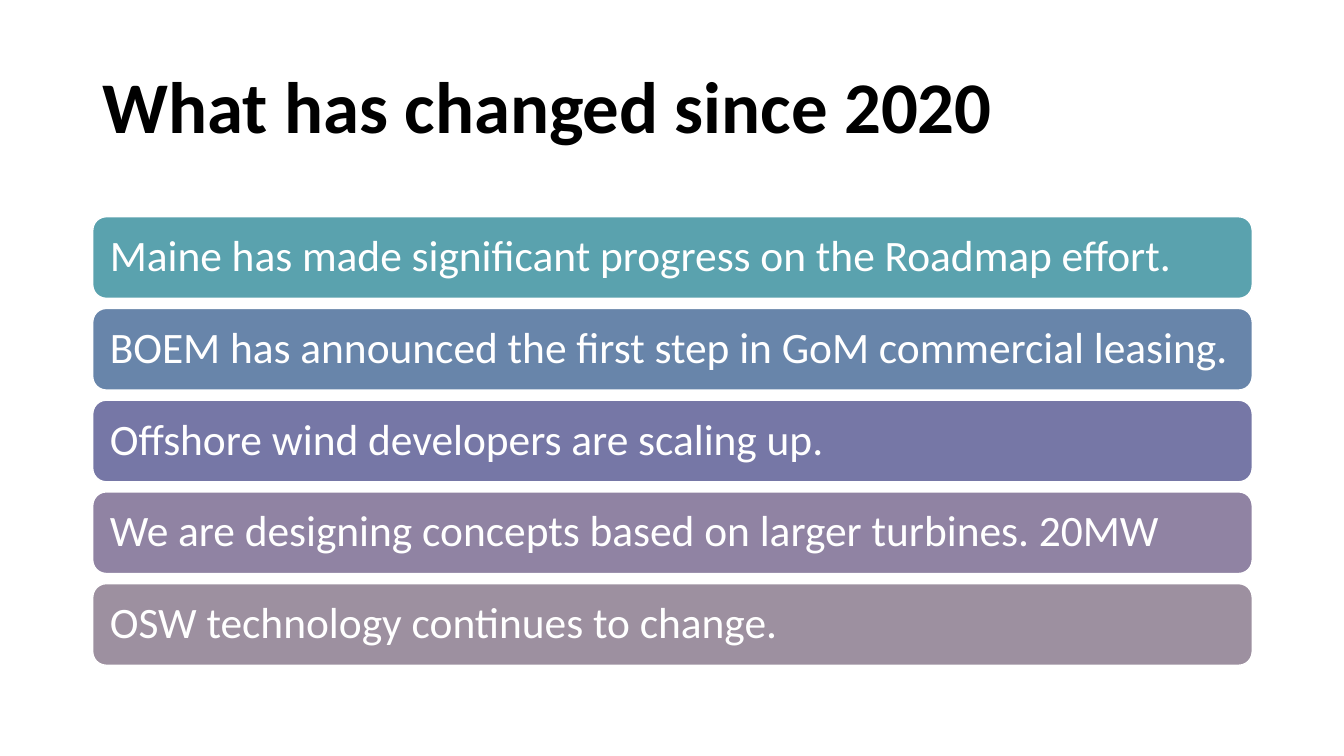
from typing import NamedTuple

from pptx import Presentation
from pptx.dml.color import RGBColor
from pptx.enum.shapes import MSO_SHAPE as SHAPE
from pptx.enum.text import MSO_ANCHOR as ANCHOR, PP_ALIGN as ALIGN
from pptx.shapes.autoshape import Shape
from pptx.slide import Slide
from pptx.util import Emu, Pt

PX = 9144  # 100 px to the inch
LEFT, WIDTH = 92, 1150
TITLE_TOP, TITLE_HEIGHT = 34, 151
BARS_TOP, BAR_HEIGHT, BAR_PITCH = 215, 81, 91
BAR_INSET = 13


class Bar(NamedTuple):
    text: str
    fill: str


TITLE = "What has changed since 2020"
BARS = [
    Bar("Maine has made significant progress on the Roadmap effort.", "5AA2AE"),
    Bar("BOEM has announced the first step in GoM commercial leasing.", "6885AA"),
    Bar("Offshore wind developers are scaling up.", "7677A6"),
    Bar("We are designing concepts based on larger turbines. 20MW", "9083A3"),
    Bar("OSW technology continues to change.", "9D90A0"),
]
TITLE_FONT = {"name": "Calibri", "size": Pt(52), "bold": True}
BAR_FONT = {"name": "Calibri", "size": Pt(31)}
BAR_MARGINS = {
    f"margin_{side}": Emu(BAR_INSET * PX)
    for side in ("left", "top", "right", "bottom")
}


def px(n: int) -> Emu:
    return Emu(n * PX)


def rgb(color: str) -> RGBColor:
    return RGBColor.from_string(color)


def write(sp: Shape, text: str, color: str, font: dict) -> None:
    """Set one left-aligned, vertically centred paragraph."""
    tf = sp.text_frame
    tf.word_wrap = True
    tf.vertical_anchor = ANCHOR.MIDDLE
    p = tf.paragraphs[0]
    p.alignment = ALIGN.LEFT
    p.line_spacing = 0.9
    r = p.add_run()
    r.text = text
    r.font.color.rgb = rgb(color)
    for key, value in font.items():
        setattr(r.font, key, value)


def add_title(slide: Slide) -> None:
    sp = slide.shapes.add_textbox(
        px(LEFT), px(TITLE_TOP), px(WIDTH), px(TITLE_HEIGHT))
    write(sp, TITLE, "000000", TITLE_FONT)


def add_bar(slide: Slide, bar: Bar, top: int) -> None:
    sp = slide.shapes.add_shape(
        SHAPE.ROUNDED_RECTANGLE, px(LEFT), px(top), px(WIDTH), px(BAR_HEIGHT))
    sp.shadow.inherit = False
    sp.fill.solid()
    sp.fill.fore_color.rgb = rgb(bar.fill)
    sp.line.color.rgb = rgb("FFFFFF")
    sp.line.width = Pt(1)
    for key, value in BAR_MARGINS.items():
        setattr(sp.text_frame, key, value)
    write(sp, bar.text, "FFFFFF", BAR_FONT)


def main() -> None:
    prs = Presentation()
    prs.slide_width, prs.slide_height = px(1333), px(750)
    slide = prs.slides.add_slide(prs.slide_layouts[6])
    add_title(slide)
    for i, bar in enumerate(BARS):
        add_bar(slide, bar, BARS_TOP + i * BAR_PITCH)
    prs.save("out.pptx")


if __name__ == "__main__":
    main()
